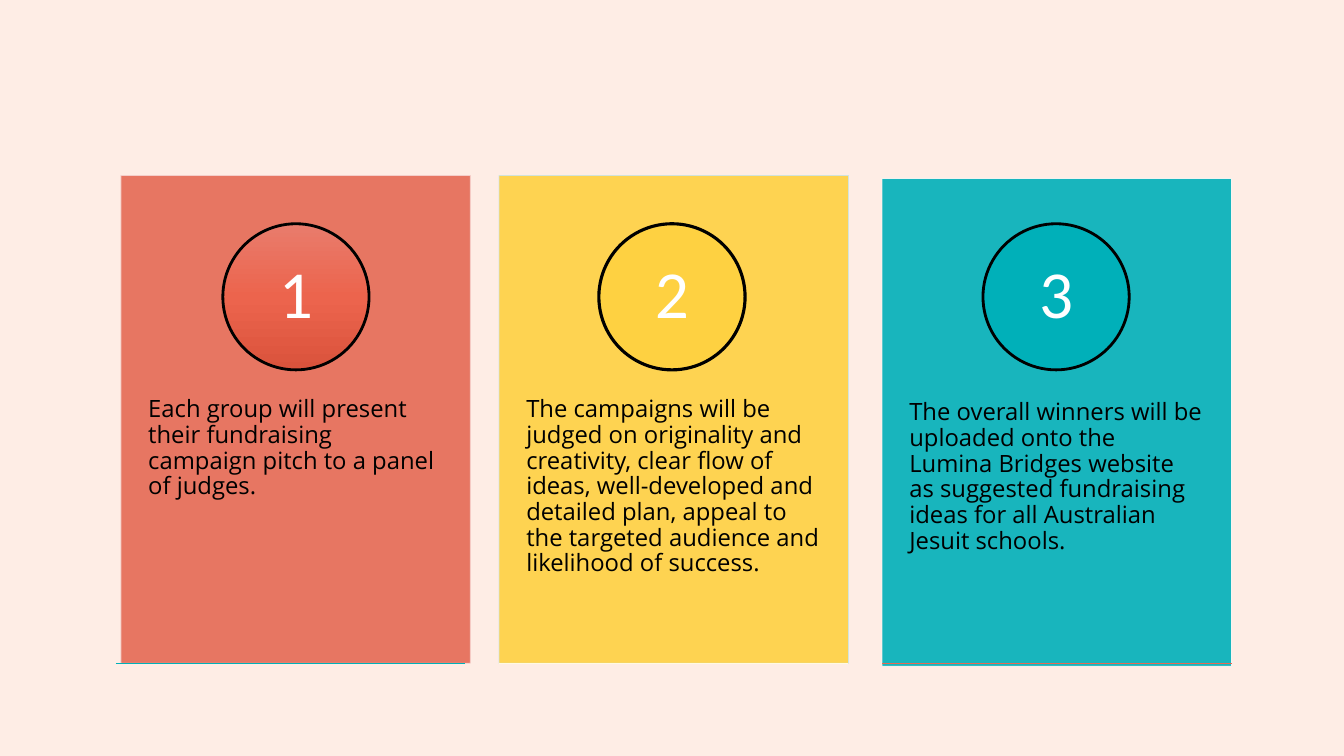
from copy import deepcopy

from lxml import etree
from pptx import Presentation, util as u
from pptx.dml.color import RGBColor
from pptx.enum import shapes, text
from pptx.oxml.ns import qn

COLORS = {
    "page": "FEEDE5", "ink": "000000", "number": "FFFFFF",
    "coral": "E56A54", "coral edge": "F5D4D1", "coral rule": "E56954",
    "yellow": "FED141", "yellow edge": "CCE4E6", "cream": "FFFAE3",
    "teal": "00B0B9", "teal edge": "FFF8F5",
    "coral top": "E97C6C", "coral middle": "EC644D", "coral bottom": "DA533C",
}
RGB = {name: RGBColor.from_string(value) for name, value in COLORS.items()}

deck = Presentation()
deck.slide_width, deck.slide_height = u.Inches(13.33), u.Inches(7.5)
slide = deck.slides.add_slide(deck.slide_layouts[6])
slide.background.fill.solid()
slide.background.fill.fore_color.rgb = RGB["page"]

# Grid: 100 columns by 100 rows
COL, ROW = deck.slide_width / 100, deck.slide_height / 100
CARD_W, CARD_H = 26, 64.53
CIRCLE_TOP, CIRCLE_W, CIRCLE_H = 29.6, 10.88, 19.33
TEXT_DROP, TEXT_H = 24.53, 38.67
RULE_ROW = 87.73


def grid(left, top, width, height):
    return [round(v) for v in (left * COL, top * ROW, width * COL, height * ROW)]


def write(frame, words, font, margins, align, anchor):
    frame.word_wrap = True
    frame.vertical_anchor = anchor
    for side, inset in zip(("left", "right", "top", "bottom"), margins):
        setattr(frame, f"margin_{side}", u.Inches(inset))
    line = frame.paragraphs[0]
    line.text, line.alignment, line.line_spacing = words, align, 0.9
    for key, value in font.items():
        setattr(line.font, key, value)
    line.font.color.rgb = RGB["number" if words.isdigit() else "ink"]


number_font = {"name": "Calibri", "size": u.Pt(48)}
body_font = {"name": "Open Sans", "size": u.Pt(17)}

# Card colour, edge, rule colour; card left and top, circle left, rule left; ring width
steps = [
    ("coral", "coral edge", "teal", 9, 23.2, 16.58, 8.63, 2,
     "Each group will present their fundraising campaign pitch to a panel of judges."),
    ("yellow", "yellow edge", "cream", 37.13, 23.2, 44.56, 37.13, 2.25,
     "The campaigns will be judged on originality and creativity, clear flow of ideas, "
     "well-developed and detailed plan, appeal to the targeted audience and "
     "likelihood of success."),
    ("teal", "teal edge", "coral rule", 65.63, 23.6, 73.14, 65.63, 2,
     "The overall winners will be uploaded onto the Lumina Bridges website as "
     "suggested fundraising ideas for all Australian Jesuit schools."),
]

for number, (hue, edge, rule_hue, left, top, circle_left, rule_left, ring, words) in enumerate(steps, 1):
    # Card, 90 % opaque
    card = slide.shapes.add_shape(shapes.MSO_SHAPE.RECTANGLE, *grid(left, top, CARD_W, CARD_H))
    card.shadow.inherit = False
    card.fill.solid()
    card.fill.fore_color.rgb = RGB[hue]
    card.line.color.rgb = RGB[edge]
    card.line.width = u.Pt(0.5)
    for tint in card._element.spPr.iter(qn("a:srgbClr")):
        etree.SubElement(tint, qn("a:alpha"), val="90000")

    # Description
    body = slide.shapes.add_textbox(*grid(left, top + TEXT_DROP, CARD_W, TEXT_H))
    write(body.text_frame, words, body_font, (0.27, 0.27, 0.36, 0.36),
          text.PP_ALIGN.LEFT, text.MSO_ANCHOR.TOP)

    # Numbered circle, the first one shaded from top to bottom
    circle = slide.shapes.add_shape(
        shapes.MSO_SHAPE.OVAL, *grid(circle_left, CIRCLE_TOP, CIRCLE_W, CIRCLE_H))
    circle.shadow.inherit = False
    if number == 1:
        circle.fill.gradient()
        circle.fill.gradient_angle = 270
        stop_list = circle._element.spPr.find(".//" + qn("a:gsLst"))
        stop_list.append(deepcopy(stop_list[-1]))
        for stop, part, place in zip(circle.fill.gradient_stops,
                                     ("top", "middle", "bottom"), (0, 0.5, 1)):
            stop.color.rgb = RGB[f"coral {part}"]
            stop.position = place
    else:
        circle.fill.solid()
        circle.fill.fore_color.rgb = RGB[hue]
    circle.line.color.rgb = RGB["ink"]
    circle.line.width = u.Pt(ring)
    write(circle.text_frame, str(number), number_font, (0.11, 0.11, 0.01, 0.01),
          text.PP_ALIGN.CENTER, text.MSO_ANCHOR.MIDDLE)

    # Rule along the foot of the card
    x, y, width, _ = grid(rule_left, RULE_ROW, CARD_W, 0)
    rule = slide.shapes.add_connector(shapes.MSO_CONNECTOR.STRAIGHT, x, y, x + width, y)
    rule.line.color.rgb = RGB[rule_hue]
    rule.line.width = u.Pt(0.5)
    etree.SubElement(rule._element.spPr, qn("a:effectLst"))

deck.save("out.pptx")
